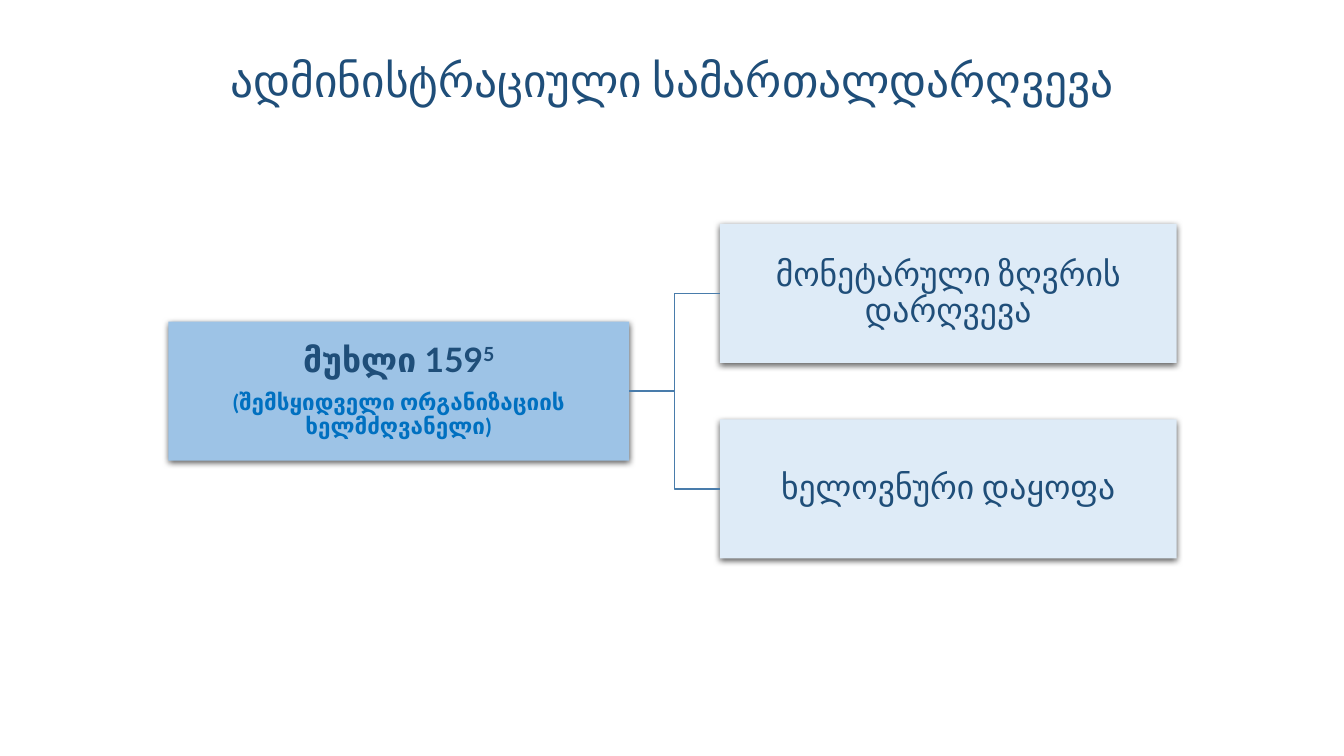
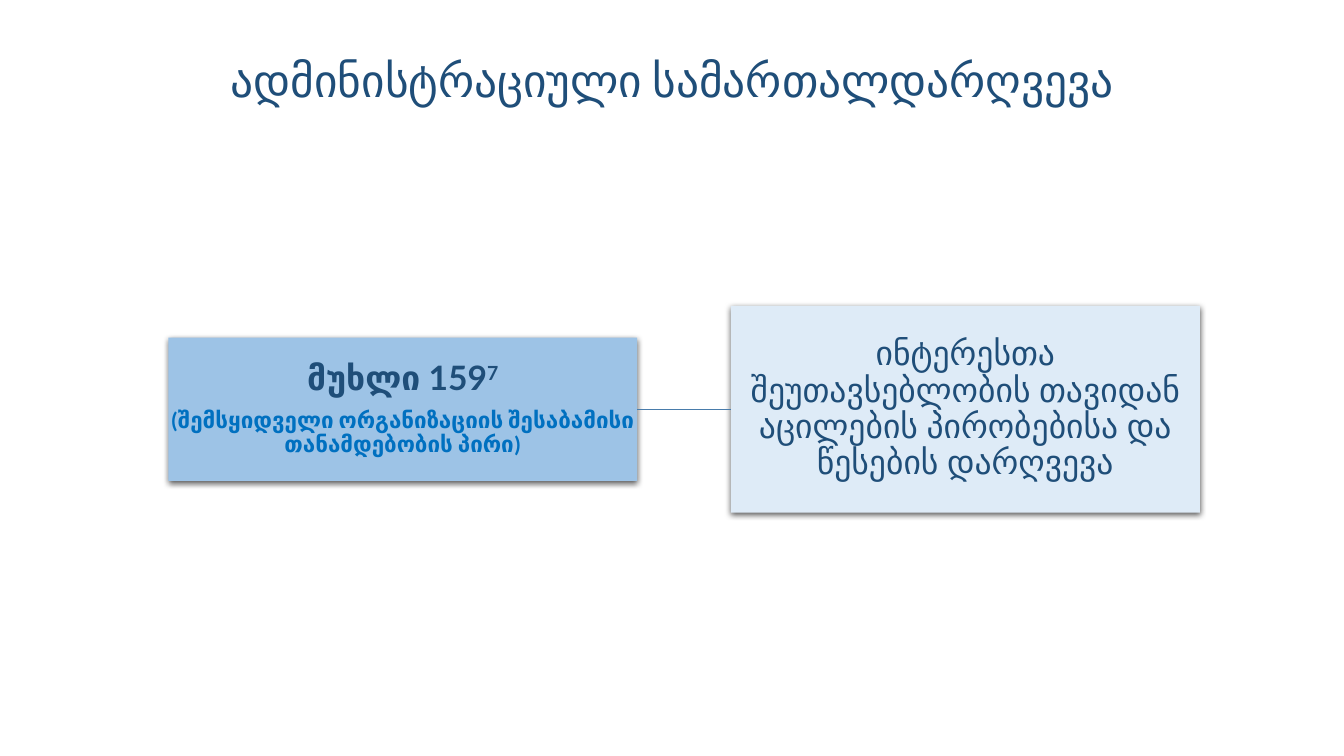
"""Builds two slides that link articles of law to the offences they cover."""
from lxml import etree
from pptx import Presentation
from pptx.dml.color import RGBColor
from pptx.enum import shapes, text
from pptx.oxml import ns
from pptx.util import Inches, Pt

NAVY = RGBColor(0x1F, 0x4E, 0x79)
BRIGHT = RGBColor(0x00, 0x70, 0xC0)
SKY = RGBColor(0x9D, 0xC3, 0xE6)
PALE = RGBColor(0xDE, 0xEB, 0xF7)
STEEL = RGBColor(0x49, 0x7C, 0xAB)
TITLE = "ადმინისტრაციული სამართალდარღვევა"
LEFT = 1.67
RIGHT_SITE, LEFT_SITE = 3, 1


class Diagram:
    """Holds the shared style and the slide being drawn."""

    def __init__(self, deck):
        """Keeps the presentation."""
        self.deck = deck
        self.page = None

    def new_page(self):
        """Starts a blank slide with the shared title."""
        self.page = self.deck.slides.add_slide(self.deck.slide_layouts[6])
        box = self.page.shapes.add_textbox(
            Inches(LEFT), Inches(0.3), Inches(10), Inches(0.98))
        box.text_frame.word_wrap = True
        box.text_frame.vertical_anchor = text.MSO_ANCHOR.MIDDLE
        self.style(box.text_frame.paragraphs[0], TITLE, 32.4)

    def style(self, para, words, size, color=NAVY, bold=False, face="Calibri"):
        """Writes one centred paragraph."""
        para.add_run().text = words
        para.alignment = text.PP_ALIGN.CENTER
        para.font.name = face
        para.font.size = Pt(size)
        para.font.bold = bold
        para.font.color.rgb = color

    def card(self, left, middle, width, height, fill):
        """Draws a shadowed rectangle centred on a height of the slide."""
        box = self.page.shapes.add_shape(
            shapes.MSO_SHAPE.RECTANGLE, Inches(left),
            Inches(middle - height / 2), Inches(width), Inches(height))
        box.fill.solid()
        box.fill.fore_color.rgb = fill
        box.line.fill.background()
        self.cast_shadow(box)
        frame = box.text_frame
        frame.word_wrap = True
        frame.vertical_anchor = text.MSO_ANCHOR.MIDDLE
        frame.margin_left = frame.margin_right = Inches(0.02)
        frame.margin_top = frame.margin_bottom = Inches(0.02)
        frame.paragraphs[0].line_spacing = 0.9
        return box

    def cast_shadow(self, box):
        """Gives a shape a soft shadow straight below."""
        box.shadow.inherit = False
        effects = box.element.spPr.find(ns.qn("a:effectLst"))
        shadow = etree.SubElement(
            effects, ns.qn("a:outerShdw"), blurRad=str(Pt(4.5)),
            dist=str(Pt(1.5)), dir="5400000", algn="ctr", rotWithShape="0")
        black = etree.SubElement(shadow, ns.qn("a:srgbClr"), val="000000")
        etree.SubElement(black, ns.qn("a:alpha"), val="63000")

    def article(self, middle, width, height, number, subject):
        """Draws an article with a raised number and its subject."""
        box = self.card(LEFT, middle, width, height, SKY)
        heading = box.text_frame.paragraphs[0]
        self.style(heading, "მუხლი 159", 24, bold=True, face="Lato")
        heading.space_after = Pt(8.4)
        raised = heading.add_run()
        raised.text = number
        raised.font._element.set("baseline", "30000")
        para = box.text_frame.add_paragraph()
        para.line_spacing = 0.9
        self.style(para, subject, 16, BRIGHT, bold=True, face="Calibri")
        return box

    def offence(self, left, middle, width, height, words, face="Calibri"):
        """Draws an offence."""
        box = self.card(left, middle, width, height, PALE)
        self.style(box.text_frame.paragraphs[0], words, 24, face=face)
        return box

    def link(self, source, target, kind):
        """Joins the right side of one card to the left side of another."""
        line = self.page.shapes.add_connector(kind, 0, 0, 0, 0)
        line.begin_connect(source, RIGHT_SITE)
        line.end_connect(target, LEFT_SITE)
        line.line.color.rgb = STEEL
        line.line.width = Pt(1)
        etree.SubElement(line.element.spPr, ns.qn("a:effectLst"))


def main():
    """Builds and saves the deck."""
    deck = Presentation()
    deck.slide_width, deck.slide_height = Inches(13.33), Inches(7.5)
    diagram = Diagram(deck)

    diagram.new_page()
    middle, offset = 3.88, 0.97
    article = diagram.article(
        middle, 4.57, 1.38, "5", "(შემსყიდველი ორგანიზაციის ხელმძღვანელი)")
    offences = ("მონეტარული ზღვრის დარღვევა", "ხელოვნური დაყოფა")
    for side, words in zip((-1, 1), offences):
        offence = diagram.offence(
            7.14, middle + side * offset, 4.53, 1.38, words)
        diagram.link(article, offence, shapes.MSO_CONNECTOR.ELBOW)

    diagram.new_page()
    middle = 4.06
    article = diagram.article(
        middle, 4.65, 1.42, "7",
        "(შემსყიდველი ორგანიზაციის შესაბამისი თანამდებობის პირი)")
    offence = diagram.offence(
        7.25, middle, 4.65, 2.05,
        "ინტერესთა შეუთავსებლობის თავიდან აცილების პირობებისა და "
        "წესების დარღვევა", "Lato")
    diagram.link(article, offence, shapes.MSO_CONNECTOR.STRAIGHT)

    deck.save("out.pptx")


if __name__ == "__main__":
    main()
